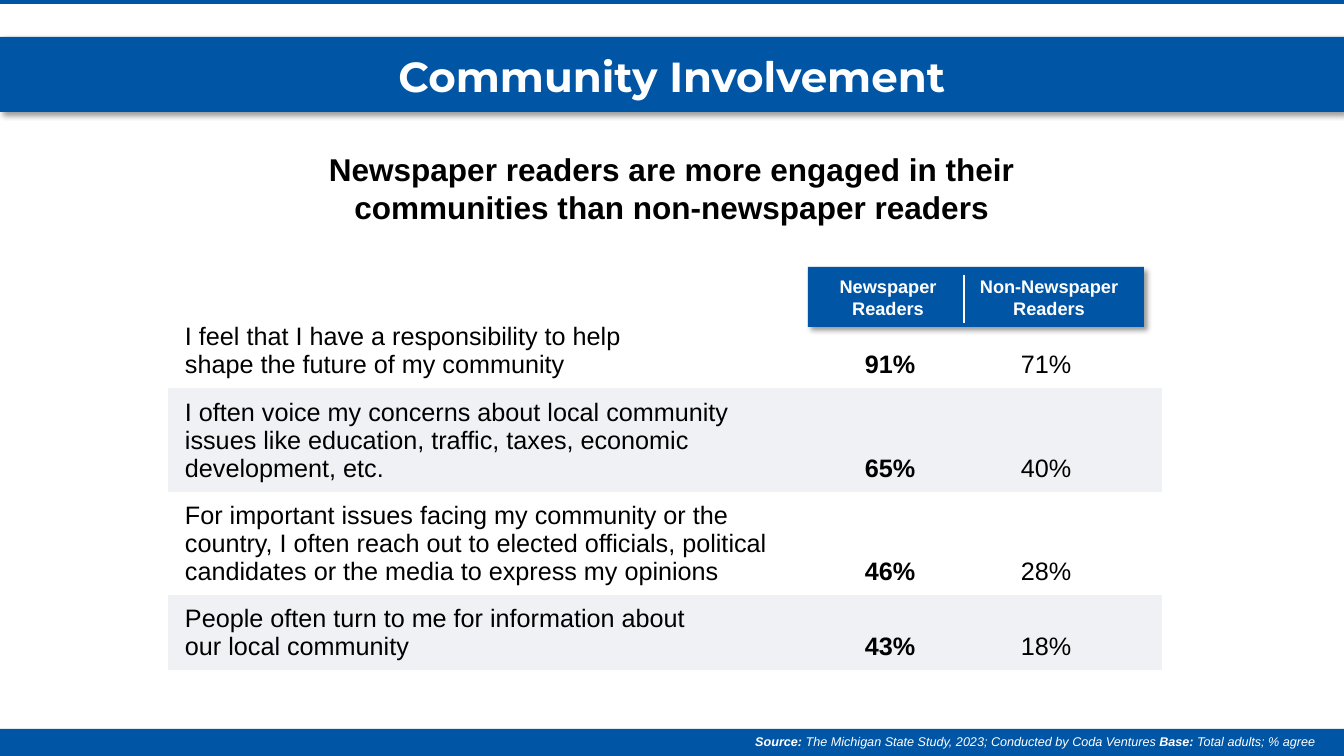
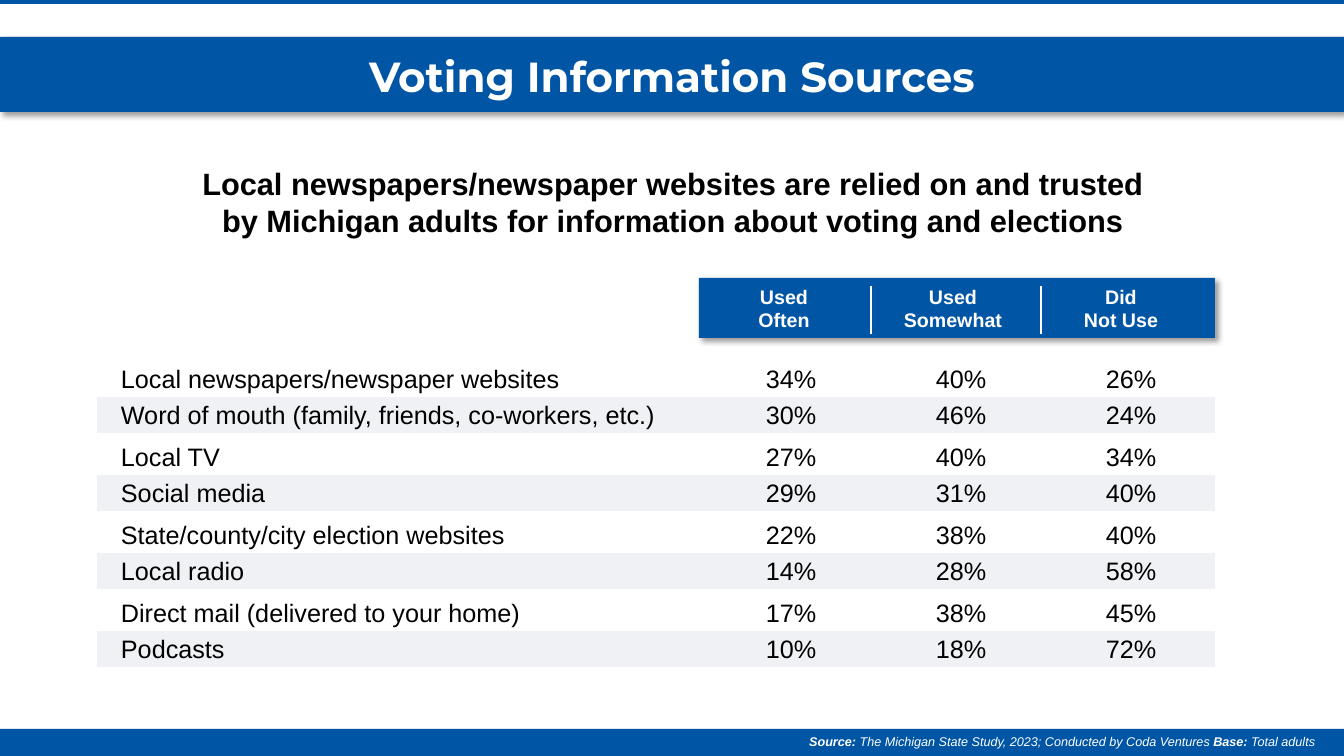
from dataclasses import dataclass

from lxml import etree
from pptx import Presentation
from pptx.dml.color import RGBColor
from pptx.enum.shapes import MSO_CONNECTOR, MSO_SHAPE
from pptx.enum.text import MSO_ANCHOR, PP_ALIGN
from pptx.oxml.ns import qn
from pptx.util import Pt

LEFT, CENTER, RIGHT = PP_ALIGN.LEFT, PP_ALIGN.CENTER, PP_ALIGN.RIGHT
TOP, MIDDLE, BOTTOM = MSO_ANCHOR.TOP, MSO_ANCHOR.MIDDLE, MSO_ANCHOR.BOTTOM
RECTANGLE, STRAIGHT = MSO_SHAPE.RECTANGLE, MSO_CONNECTOR.STRAIGHT
TITLE_ONLY = 5
NO_STYLE_TABLE = "{2D5ABB26-0587-4C30-8999-92F81FD0307C}"
WIDTH, HEIGHT = 1344, 756


@dataclass(frozen=True)
class Theme:
    blue: str = "0055A5"
    stripe: str = "EFF1F5"
    white: str = "FFFFFF"
    black: str = "000000"
    title_font: str = "Montserrat"
    body_font: str = "Arial"
    title_size: float = 30
    body_size: float = 18
    footer_size: float = 9


THEME = Theme()

# Content: boxes are left, top, width, height in px
SOURCE = " The Michigan State Study, 2023; Conducted by Coda Ventures "
SLIDES = [
    {
        "title": "Community Involvement",
        "base": " Total adults; % agree",
        "headline": "Newspaper readers are more engaged in their "
                    "communities than non-newspaper readers",
        "headline_box": (279, 147, 786, 82),
        "headline_size": 22.5,
        "header_box": (808, 267, 336, 60),
        "header_size": 13,
        "headers": [("Newspaper\nReaders", 888), ("Non-Newspaper\nReaders", 1049)],
        "dividers": [964],
        "table_at": (168, 314),
        "columns": [680, 156, 158],
        "row_heights": [74, 104, 103, 75],
        "indent": 17,
        "bottom_gap": 9,
        "bold_column": 1,
        "rows": [
            ("I feel that I have a responsibility to help\n"
             "shape the future of my community", "91%", "71%"),
            ("I often voice my concerns about local community\n"
             "issues like education, traffic, taxes, economic\n"
             "development, etc.", "65%", "40%"),
            ("For important issues facing my community or the\n"
             "country, I often reach out to elected officials, political\n"
             "candidates or the media to express my opinions", "46%", "28%"),
            ("People often turn to me for information about\n"
             "our local community", "43%", "18%"),
        ],
    },
    {
        "title": "Voting Information Sources",
        "base": " Total adults",
        "headline": "Local newspapers/newspaper websites are relied on and trusted\n"
                    "by Michigan adults for information about voting and elections",
        "headline_box": (134, 159, 1078, 85),
        "headline_size": 22,
        "header_box": (699, 278, 516, 60),
        "header_size": 14,
        "headers": [("Used\nOften", 784), ("Used\nSomewhat", 953), ("Did\nNot Use", 1121)],
        "dividers": [871, 1041],
        "table_at": (97, 355),
        "columns": [645, 170, 170, 133],
        "row_heights": [42, 36] * 4,
        "indent": 24,
        "bottom_gap": 3,
        "bold_column": None,
        "rows": [
            ("Local newspapers/newspaper websites", "34%", "40%", "26%"),
            ("Word of mouth (family, friends, co-workers, etc.)", "30%", "46%", "24%"),
            ("Local TV", "27%", "40%", "34%"),
            ("Social media", "29%", "31%", "40%"),
            ("State/county/city election websites", "22%", "38%", "40%"),
            ("Local radio", "14%", "28%", "58%"),
            ("Direct mail (delivered to your home)", "17%", "38%", "45%"),
            ("Podcasts", "10%", "18%", "72%"),
        ],
    },
]


def px(*lengths):
    """Turn px lengths into EMU."""
    return [round(length * 914400 / 100.8) for length in lengths]


def color(code):
    return RGBColor.from_string(code)


def write(frame, text, size=THEME.body_size, font=THEME.body_font, ink=THEME.black,
          bold=False, italic=False, align=LEFT):
    """Write one paragraph per line; a list of (text, bold) pairs makes one line of runs."""
    lines = [[(line, bold) for line in [part]] for part in text.split("\n")] \
        if isinstance(text, str) else [text]
    for index, line in enumerate(lines):
        para = frame.add_paragraph() if index else frame.paragraphs[0]
        para.alignment = align
        for words, strong in line:
            span = para.add_run()
            span.text = words
            span.font.name, span.font.size = font, Pt(size)
            span.font.bold, span.font.italic = strong, italic
            span.font.color.rgb = color(ink)


def add_text(page, bounds, text, anchor=MIDDLE, **style):
    frame = page.shapes.add_textbox(*px(*bounds)).text_frame
    frame.word_wrap = True
    frame.vertical_anchor = anchor
    write(frame, text, **style)
    return frame


def add_band(page, bounds, shadow=False):
    band = page.shapes.add_shape(RECTANGLE, *px(*bounds))
    band.fill.solid()
    band.fill.fore_color.rgb = color(THEME.blue)
    band.line.fill.background()
    band.shadow.inherit = False
    if shadow:
        effects = band.element.spPr.find(qn("a:effectLst"))
        outer = etree.SubElement(effects, qn("a:outerShdw"), blurRad=str(Pt(4)),
                                 dist=str(Pt(3)), dir="2700000", algn="tl", rotWithShape="0")
        tint = etree.SubElement(outer, qn("a:srgbClr"), val=THEME.black)
        etree.SubElement(tint, qn("a:alpha"), val="40000")


def add_divider(page, x, top, bottom):
    line = page.shapes.add_connector(STRAIGHT, *px(x, top, x, bottom))
    line.line.color.rgb = color(THEME.white)
    line.line.width = Pt(1)
    etree.SubElement(line.element.spPr, qn("a:effectLst"))


def add_frame(page, title_text, base):
    """Bands, title and footer shared by every slide."""
    add_band(page, (0, 0, WIDTH, 4))
    add_band(page, (0, 729, WIDTH, 27))
    add_band(page, (0, 37, WIDTH, 75), shadow=True)
    title = page.shapes.title
    title.left, title.top, title.width, title.height = px(0, 21, WIDTH, 85)
    title.text_frame.vertical_anchor = BOTTOM
    write(title.text_frame, title_text, size=THEME.title_size, font=THEME.title_font,
          ink=THEME.white, bold=True, align=CENTER)
    title.element.getparent().append(title.element)  # bring in front of its band
    add_text(page, (439, 729, 886, 25),
             [("Source:", True), (SOURCE, False), ("Base:", True), (base, False)],
             anchor=TOP, size=THEME.footer_size, ink=THEME.white, italic=True, align=RIGHT)


def add_header(page, content):
    left, top, width, height = content["header_box"]
    add_band(page, content["header_box"], shadow=True)
    for label, middle in content["headers"]:
        add_text(page, (middle - 100, top, 200, height), label, size=content["header_size"],
                 ink=THEME.white, bold=True, align=CENTER)
    for x in content["dividers"]:
        add_divider(page, x, top + 8, top + height - 4)


def add_rows(page, content):
    rows, columns, heights = content["rows"], content["columns"], content["row_heights"]
    bounds = (*content["table_at"], sum(columns), sum(heights))
    graphic = page.shapes.add_table(len(rows), len(columns), *px(*bounds))
    next(graphic.element.iter(qn("a:tableStyleId"))).text = NO_STYLE_TABLE
    table = graphic.table
    table.first_row = table.horz_banding = False
    for column, width in zip(table.columns, px(*columns)):
        column.width = width
    for row_index, (row, height) in enumerate(zip(rows, px(*heights))):
        table.rows[row_index].height = height
        for column_index, text in enumerate(row):
            cell = table.cell(row_index, column_index)
            cell.margin_left, cell.margin_bottom = px(content["indent"], content["bottom_gap"])
            cell.margin_top = cell.margin_right = 0
            cell.vertical_anchor = BOTTOM
            if row_index % 2:
                cell.fill.solid()
                cell.fill.fore_color.rgb = color(THEME.stripe)
            else:
                cell.fill.background()
            write(cell.text_frame, text, bold=column_index == content["bold_column"])


def main():
    deck = Presentation()
    deck.slide_width, deck.slide_height = px(WIDTH, HEIGHT)
    for content in SLIDES:
        page = deck.slides.add_slide(deck.slide_layouts[TITLE_ONLY])
        add_frame(page, content["title"], content["base"])
        headline = add_text(page, content["headline_box"], content["headline"],
                            size=content["headline_size"], bold=True, align=CENTER)
        headline.margin_left = headline.margin_right = 0
        add_rows(page, content)
        add_header(page, content)
    deck.save("out.pptx")


if __name__ == "__main__":
    main()
